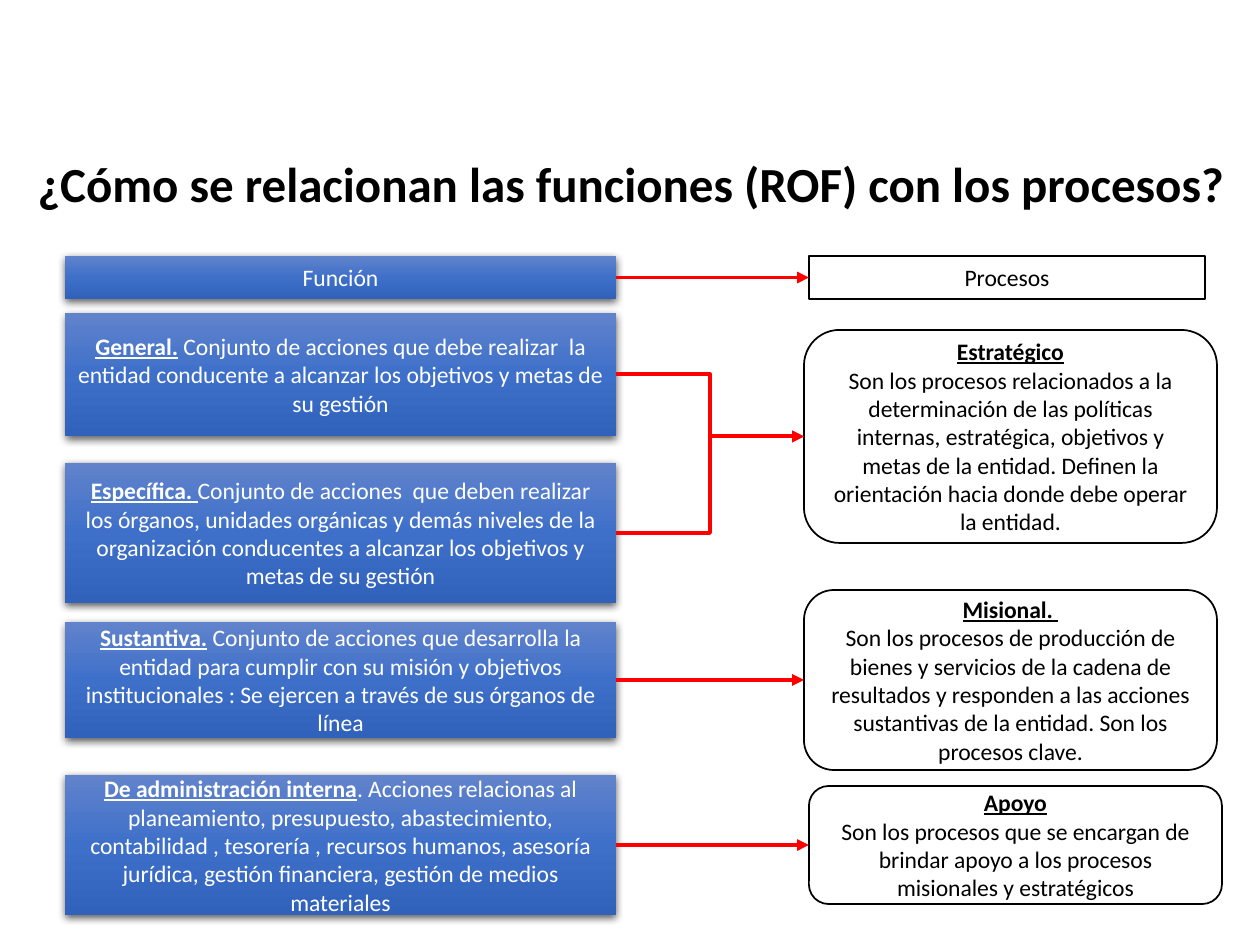
from lxml import etree
from pptx import Presentation
from pptx.dml.color import RGBColor
from pptx.enum.shapes import MSO_CONNECTOR, MSO_SHAPE
from pptx.enum.text import MSO_ANCHOR, PP_ALIGN
from pptx.oxml.ns import qn
from pptx.util import Pt

RECT, ROUND = MSO_SHAPE.RECTANGLE, MSO_SHAPE.ROUNDED_RECTANGLE
LINE, ELBOW = MSO_CONNECTOR.STRAIGHT, MSO_CONNECTOR.ELBOW
CENTER, MIDDLE = PP_ALIGN.CENTER, MSO_ANCHOR.MIDDLE
LEFT_SITE, RIGHT_SITE = 1, 3
FONT = "Calibri"
HEX = {"black": "000000", "white": "FFFFFF", "red": "FF0000",
       "top": "6183CB", "mid": "3E70CA", "low": "3062BB"}

# Content: key, top, height, bold lead, rest
TITLE = "¿Cómo se relacionan las funciones (ROF) con los procesos?"
ROLES = [
    ("head", 256, 43, "", "Función"),
    ("general", 313, 123, "General.",
     " Conjunto de acciones que debe realizar  la entidad conducente a "
     "alcanzar los objetivos y metas de su gestión"),
    ("specific", 463, 140, "Específica. ",
     "Conjunto de acciones  que deben realizar los órganos, unidades "
     "orgánicas y demás niveles de la organización conducentes a alcanzar "
     "los objetivos y metas de su gestión"),
    ("core", 622, 116, "Sustantiva.",
     " Conjunto de acciones que desarrolla la entidad para cumplir con su "
     "misión y objetivos institucionales : Se ejercen a través de sus "
     "órganos de línea"),
    ("admin", 775, 140, "De administración interna",
     ". Acciones relacionas al planeamiento, presupuesto, abastecimiento, "
     "contabilidad , tesorería , recursos humanos, asesoría jurídica, "
     "gestión financiera, gestión de medios materiales"),
]
# Content: key, kind, left, top, width, height, heading, body
STEPS = [
    ("steps", RECT, 809, 256, 396, 43, "", "Procesos"),
    ("plan", ROUND, 804, 330, 413, 213, "Estratégico",
     "Son los procesos relacionados a la determinación de las políticas "
     "internas, estratégica, objetivos y metas de la entidad. Definen la "
     "orientación hacia donde debe operar la entidad."),
    ("mission", ROUND, 804, 590, 413, 180, "Misional. ",
     "Son los procesos de producción de bienes y servicios de la cadena de "
     "resultados y responden a las acciones sustantivas de la entidad. Son "
     "los procesos clave."),
    ("support", ROUND, 809, 786, 413, 118, "Apoyo",
     "Son los procesos que se encargan de brindar apoyo a los procesos "
     "misionales y estratégicos"),
]
LINKS = [("general", "plan", ELBOW), ("specific", "plan", ELBOW),
         ("core", "mission", LINE), ("admin", "support", LINE),
         ("head", "steps", LINE)]


def px(n):
    return round(n * 914400 / 126)


def rgb(name):
    return RGBColor.from_string(HEX[name])


def sub(node, tag, **attrs):
    return etree.SubElement(node, qn(tag), attrs)


def style(run, size, color, bold=False, line=False):
    font = run.font
    font.name, font.size = FONT, Pt(size)
    font.bold, font.underline = bold, line
    font.color.rgb = rgb(color)


def add_box(kind, *area):
    box = slide.shapes.add_shape(kind, *map(px, area))
    box.shadow.inherit = False
    box.text_frame.word_wrap = True
    box.text_frame.vertical_anchor = MIDDLE
    return box


def write(para, parts, color):
    para.alignment = CENTER
    for text, lead in parts:
        if text:
            run = para.add_run()
            run.text = text
            style(run, 13.5, color, lead, lead)


def shade(box):
    """Three-stop gradient and a soft shadow below."""
    box.fill.gradient()
    box.fill.gradient_angle = 270
    props = box._element.spPr
    stops = props.find(".//" + qn("a:gsLst"))
    for stop in list(stops):
        stops.remove(stop)
    for pos, name in ((0, "top"), (50000, "mid"), (100000, "low")):
        sub(sub(stops, "a:gs", pos=str(pos)), "a:srgbClr", val=HEX[name])
    cast = sub(props.find(qn("a:effectLst")), "a:outerShdw",
               blurRad=str(Pt(4.5)), dist=str(Pt(1.5)), dir="5400000",
               algn="ctr", rotWithShape="0")
    sub(sub(cast, "a:srgbClr", val=HEX["black"]), "a:alpha", val="63000")


deck = Presentation()
deck.slide_width, deck.slide_height = px(1260), px(945)
slide = deck.slides.add_slide(deck.slide_layouts[5])

# Title
title = slide.shapes.title
title.left, title.top, title.width, title.height = map(px, (1, 147, 1259, 72))
title.text_frame.text = TITLE
title.text_frame.vertical_anchor = MIDDLE
title.text_frame.paragraphs[0].alignment = CENTER
style(title.text_frame.paragraphs[0].runs[0], 28, "black", True)

# Functions on the left
boxes = {}
for key, top, high, lead, rest in ROLES:
    box = boxes[key] = add_box(RECT, 65, top, 551, high)
    shade(box)
    box.line.fill.background()
    write(box.text_frame.paragraphs[0], [(lead, True), (rest, False)], "white")

# Processes on the right
for key, kind, left, top, wide, high, head, body in STEPS:
    box = boxes[key] = add_box(kind, left, top, wide, high)
    box.fill.solid()
    box.fill.fore_color.rgb = rgb("white")
    box.line.color.rgb = rgb("black")
    box.line.width = Pt(1)
    para = box.text_frame.paragraphs[0]
    if head:
        write(para, [(head, True)], "black")
        para = box.text_frame.add_paragraph()
    write(para, [(body, False)], "black")

# Arrows from functions to processes
for start, end, kind in LINKS:
    one, two = boxes[start], boxes[end]
    link = slide.shapes.add_connector(
        kind, one.left + one.width, one.top + one.height // 2,
        two.left, two.top + two.height // 2)
    link.begin_connect(one, RIGHT_SITE)
    link.end_connect(two, LEFT_SITE)
    link.line.color.rgb = rgb("red")
    link.line.width = Pt(2.25)
    sub(link.line._get_or_add_ln(), "a:tailEnd", type="triangle")
    sub(link._element.spPr, "a:effectLst")

deck.save("out.pptx")
